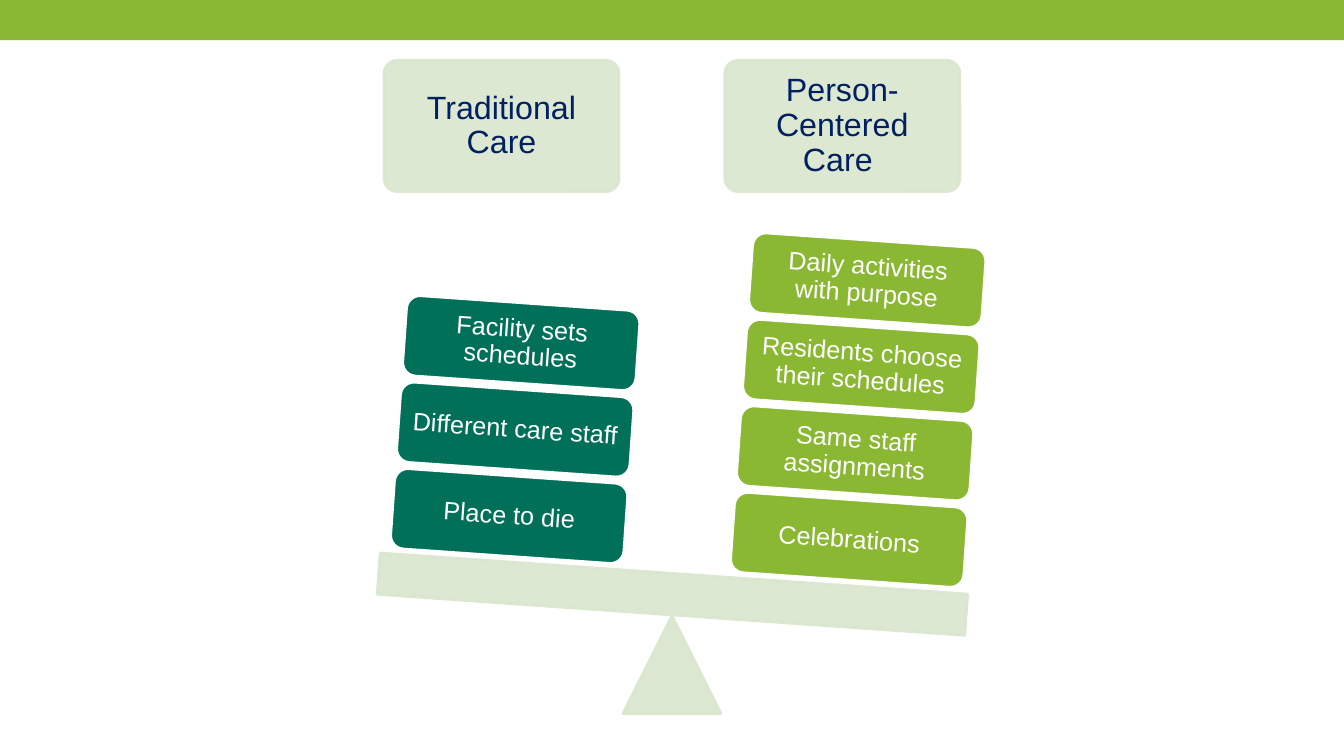
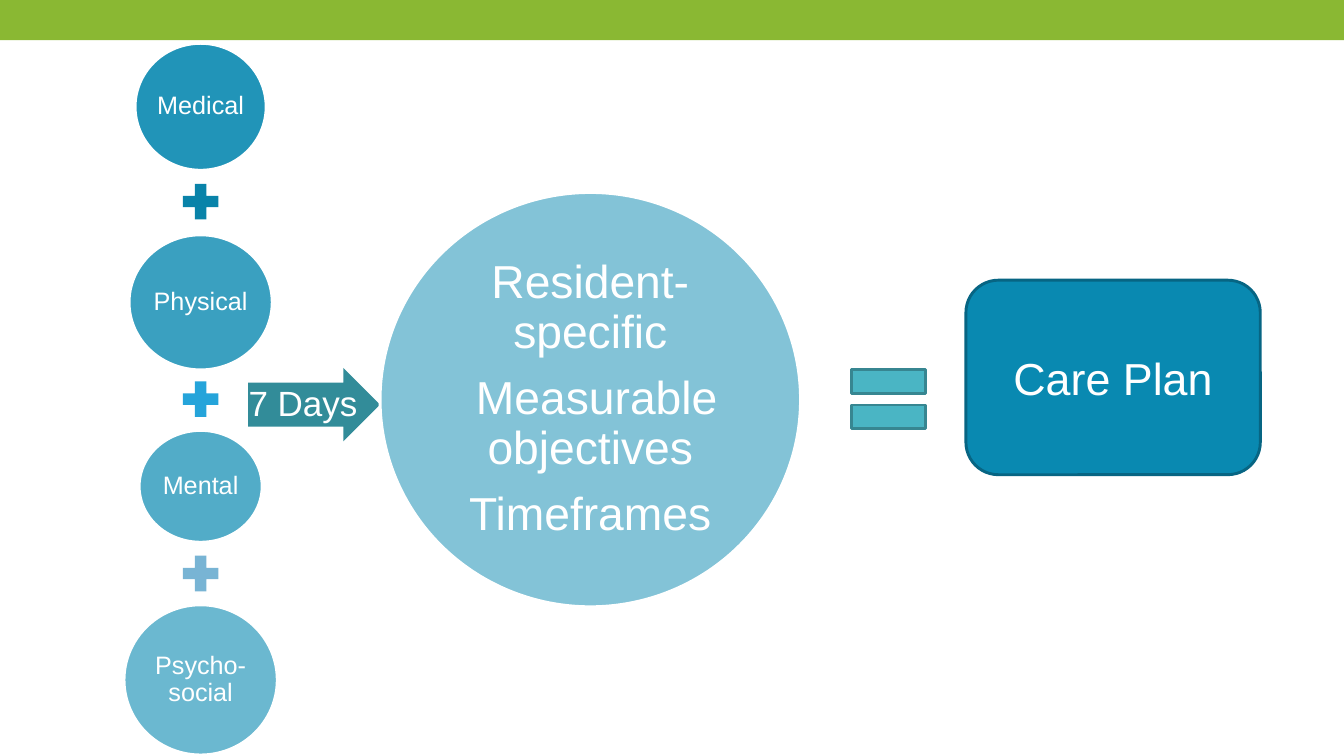
import math

import pptx
import pptx.dml.color
import pptx.enum.shapes
import pptx.enum.text
import pptx.oxml
import pptx.oxml.ns
import pptx.util

Inches = pptx.util.Inches
Pt = pptx.util.Pt
SHAPE = pptx.enum.shapes.MSO_SHAPE

FONT = "Arial"
LINE_WIDTH = 2.08
COLORS = {
    "band": "8AB833",
    "pale": "DAE6CE",
    "navy": "002060",
    "white": "FFFFFF",
    "green": "017058",
    "blue": "0989B1",
    "blue_edge": "076583",
    "plus_1": "0983A9",
    "plus_2": "25A4DA",
    "plus_3": "78B4D4",
    "arrow": "328C99",
    "equal": "4AB5C4",
    "equal_edge": "378691",
}

# Each side of the scale: heading, block colour, blocks from the bottom up
SCALE_SIDES = [
    ("Traditional Care", "green",
     ["Place to die", "Different care staff", "Facility sets schedules"]),
    ("Person-Centered Care ", "band",
     ["Celebrations", "Same staff assignments",
      "Residents choose their schedules", "Daily activities with purpose"]),
]
TILT = 4

# Text, width, height, opacity, downward nudge
NEEDS = [
    ("Medical", 1.3, 1.26, 90, 0),
    ("Physical", 1.42, 1.34, 80, 0.02),
    ("Mental", 1.22, 1.11, 70, 0),
    ("Psycho-social", 1.52, 1.49, 60, 0),
]
PLUS_COLORS = ["plus_1", "plus_2", "plus_3"]
GOALS = ["Resident-specific", " Measurable objectives", "Timeframes"]


def rgb(name):
    return pptx.dml.color.RGBColor.from_string(COLORS[name])


def add_shape(slide, kind, box, fill, line=None, opacity=100, rotation=0, adj=()):
    sp = slide.shapes.add_shape(kind, *(Inches(v) for v in box))
    sp.shadow.inherit = False
    sp.rotation = rotation
    for i, value in enumerate(adj):
        sp.adjustments[i] = value
    sp.fill.solid()
    sp.fill.fore_color.rgb = rgb(fill)
    if line:
        sp.line.color.rgb = rgb(line)
        sp.line.width = Pt(LINE_WIDTH)
    else:
        sp.line.fill.background()
    if opacity < 100:
        set_opacity(sp, COLORS[fill], opacity)
    return sp


def set_opacity(sp, color, opacity):
    """Make every use of the colour, in fill or line, see-through."""
    for clr in sp._element.spPr.iter(pptx.oxml.ns.qn("a:srgbClr")):
        if clr.get("val") == color:
            alpha = pptx.oxml.parse_xml(
                f'<a:alpha {pptx.oxml.ns.nsdecls("a")} val="{opacity * 1000}"/>')
            clr.append(alpha)


def set_text(sp, lines, size, color="white", inset=0.0, spacing=0.9):
    tf = sp.text_frame
    tf.word_wrap = True
    tf.vertical_anchor = pptx.enum.text.MSO_ANCHOR.MIDDLE
    tf.margin_left = tf.margin_right = Inches(inset)
    tf.margin_top = tf.margin_bottom = Inches(inset)
    for i, line in enumerate(lines):
        p = tf.add_paragraph() if i else tf.paragraphs[0]
        p.alignment = pptx.enum.text.PP_ALIGN.CENTER
        p.line_spacing = spacing
        if i < len(lines) - 1:
            p.space_after = Pt(round(0.35 * size, 1))
        r = p.add_run()
        r.text = line
        r.font.name = FONT
        r.font.size = Pt(size)
        r.font.color.rgb = rgb(color)


def add_slide(prs):
    """Add a blank slide with the green band across the top."""
    slide = prs.slides.add_slide(prs.slide_layouts[6])
    add_shape(slide, SHAPE.RECTANGLE, (0, 0, 13.33, 0.4), "band")
    return slide


def build_scale(prs):
    slide = add_slide(prs)
    pale = {"fill": "pale", "line": "pale", "opacity": 90}
    for i, (heading, _, _) in enumerate(SCALE_SIDES):
        sp = add_shape(slide, SHAPE.ROUNDED_RECTANGLE,
                       (3.81 + 3.38 * i, 0.6, 2.33, 1.3), adj=[0.1], **pale)
        set_text(sp, [heading], 23, "navy", 0.1)
    add_shape(slide, SHAPE.ISOSCELES_TRIANGLE, (6.18, 6.11, 0.97, 0.97), **pale)
    add_shape(slide, SHAPE.RECTANGLE, (3.75, 5.69, 5.84, 0.41), rotation=TILT, **pale)

    # Columns run along the tilted plank, blocks rise at right angles to it
    cos, sin = math.cos(math.radians(TILT)), math.sin(math.radians(TILT))
    for i, (_, color, blocks) in enumerate(SCALE_SIDES):
        for j, block in enumerate(blocks):
            along, up = 3.38 * i, 0.86 * j
            left = 3.89 + along * cos + up * sin
            top = 4.72 + along * sin - up * cos
            sp = add_shape(slide, SHAPE.ROUNDED_RECTANGLE, (left, top, 2.32, 0.8),
                           color, "white", rotation=TILT)
            set_text(sp, [block], 18, inset=0.08)


def build_care_plan(prs):
    slide = add_slide(prs)
    center, gap, plus = 1.99, 0.07, 0.48
    top = 0.43
    for i, (need, width, height, opacity, nudge) in enumerate(NEEDS):
        sp = add_shape(slide, SHAPE.OVAL,
                       (center - width / 2, top + nudge, width, height),
                       "blue", "white", opacity)
        set_text(sp, [need], 18)
        top += height + gap
        if i < len(PLUS_COLORS):
            add_shape(slide, SHAPE.MATH_PLUS,
                      (center - plus / 2, top, plus, plus), PLUS_COLORS[i])
            top += plus + gap

    arrow = add_shape(slide, SHAPE.RIGHT_ARROW, (2.46, 3.65, 1.31, 0.73),
                      "arrow", adj=[0.6, 0.5])
    set_text(arrow, ["7 Days"], 25)

    goals = add_shape(slide, SHAPE.OVAL, (3.77, 1.91, 4.17, 4.11),
                      "blue", "white", 50)
    set_text(goals, GOALS, 33, inset=0.05)

    plan = add_shape(slide, SHAPE.ROUNDED_RECTANGLE, (9.58, 2.78, 2.92, 1.93),
                     "blue", "blue_edge")
    set_text(plan, ["Care Plan"], 32, inset=0.05, spacing=1.0)
    add_shape(slide, SHAPE.MATH_EQUAL, (8.31, 3.46, 1, 1), "equal", "equal_edge")


def main():
    prs = pptx.Presentation()
    prs.slide_width = Inches(13.33)
    prs.slide_height = Inches(7.5)
    build_scale(prs)
    build_care_plan(prs)
    prs.save("out.pptx")


if __name__ == "__main__":
    main()
